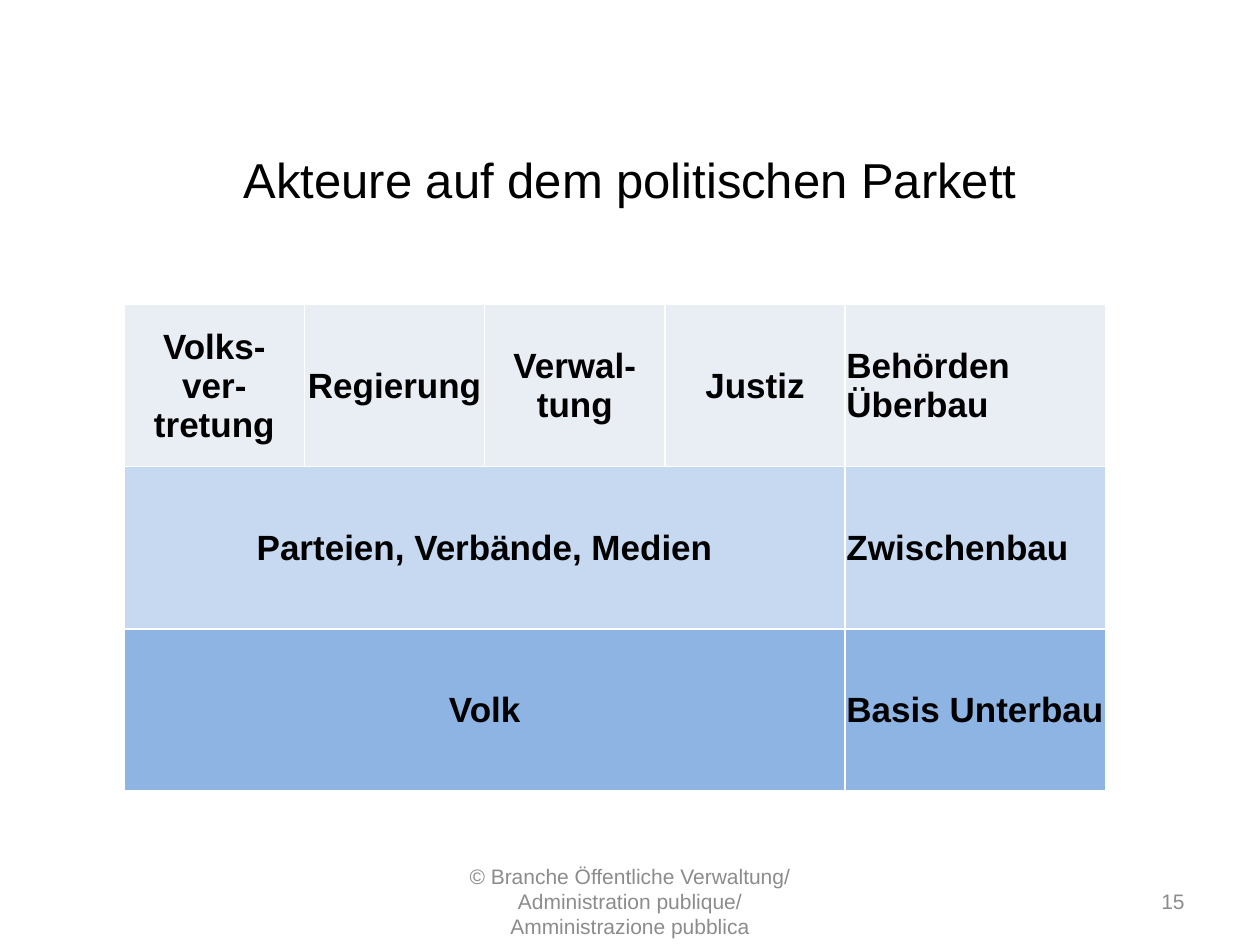
from lxml import etree
from pptx import Presentation
from pptx.dml.color import RGBColor
from pptx.enum import text
from pptx.oxml import ns
from pptx.util import Pt

COLORS = {"black": "000000", "grey": "8C8C8C", "white": "FFFFFF",
          "top": "E9EDF4", "middle": "C6D9F1", "base": "8EB4E3"}
CENTER, LEFT, RIGHT = text.PP_ALIGN.CENTER, text.PP_ALIGN.LEFT, text.PP_ALIGN.RIGHT

# Fill and texts of each level; the last text names the level
LEVELS = [
    ("top", [["Volks-\nver-", "tretung"], ["Regierung"], ["Verwal-tung"],
             ["Justiz"], ["Behörden\nÜberbau"]]),
    ("middle", [["Parteien, Verbände, Medien"], ["Zwischenbau"]]),
    ("base", [["Volk"], ["Basis Unterbau"]]),
]


def write(tf, paragraphs, size=12, color="black", bold=False, align=CENTER):
    tf.word_wrap = True
    for i, content in enumerate(paragraphs):
        p = tf.add_paragraph() if i else tf.paragraphs[0]
        p.text = content
        p.alignment = align
        for r in p.runs:
            r.font.name = "Arial"
            r.font.size = Pt(size)
            r.font.bold = bold
            r.font.color.rgb = RGBColor.from_string(COLORS[color])


def add_text(slide, box, content, **fmt):
    tf = slide.shapes.add_textbox(*map(Pt, box)).text_frame
    write(tf, [content], **fmt)
    tf.vertical_anchor = text.MSO_ANCHOR.MIDDLE


def add_borders(cell, color="white", width=1):
    tc_pr = cell._tc.get_or_add_tcPr()
    for i, side in enumerate(("lnL", "lnR", "lnT", "lnB")):
        ln = etree.Element(ns.qn(f"a:{side}"), w=str(Pt(width)))
        fill = etree.SubElement(ln, ns.qn("a:solidFill"))
        etree.SubElement(fill, ns.qn("a:srgbClr"), val=COLORS[color])
        tc_pr.insert(i, ln)


def add_levels(slide, box):
    left, top, width, height = box
    label_width, actors = 149, 4
    table = slide.shapes.add_table(len(LEVELS), actors + 1, *map(Pt, box)).table
    for i, column in enumerate(table.columns):
        column.width = Pt((width - label_width) / actors if i < actors else label_width)
    for row, (fill, texts) in enumerate(LEVELS):
        table.rows[row].height = Pt(height / len(LEVELS))
        # A single actor group spans all actor columns
        if len(texts) == 2:
            table.cell(row, 0).merge(table.cell(row, actors - 1))
        columns = [*range(len(texts) - 1), actors]
        for column, paragraphs in zip(columns, texts):
            write(table.cell(row, column).text_frame, paragraphs, size=20, bold=True,
                  align=LEFT if column == actors else CENTER)
        for cell in table.rows[row].cells:
            cell.fill.solid()
            cell.fill.fore_color.rgb = RGBColor.from_string(COLORS[fill])
            cell.vertical_anchor = text.MSO_ANCHOR.MIDDLE
            cell.margin_left = cell.margin_right = cell.margin_top = Pt(0.75)
            cell.margin_bottom = 0
            add_borders(cell)


def add_footer(slide, box):
    left, top, width, height = box
    add_text(slide, (left + 210, top, 228, height),
             "© Branche Öffentliche Verwaltung/ Administration publique/ "
             "Amministrazione pubblica", color="grey")
    add_text(slide, (left + width - 168, top, 168, height), "15",
             color="grey", align=RIGHT)


def main():
    prs = Presentation()
    prs.slide_width, prs.slide_height = Pt(720), Pt(540)
    s = prs.slides.add_slide(prs.slide_layouts[6])
    add_text(s, (36, 77, 648, 51), "Akteure auf dem politischen Parkett", size=28)
    add_levels(s, (71, 174, 561, 278))
    add_footer(s, (36, 500.5, 648, 28.75))
    prs.save("out.pptx")


if __name__ == "__main__":
    main()
